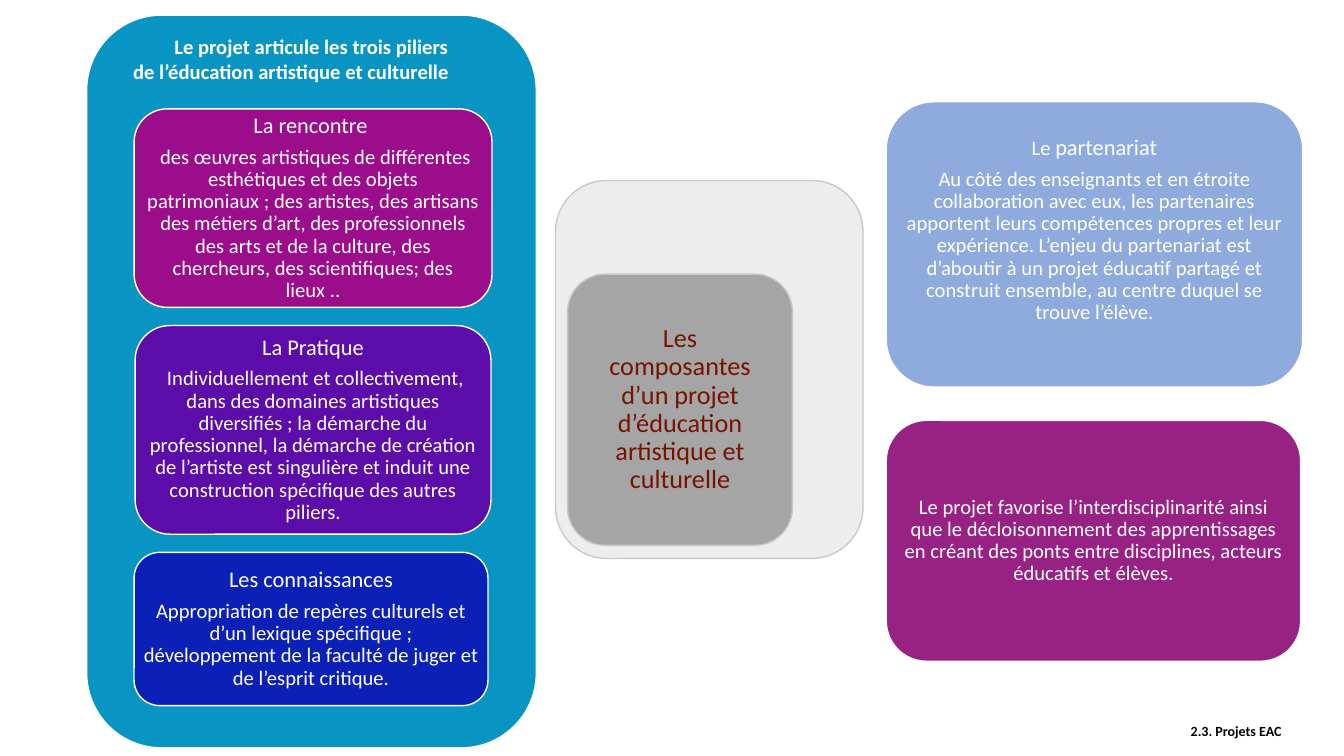
from dataclasses import dataclass

from pptx import Presentation
from pptx.dml.color import RGBColor
from pptx.enum import shapes, text
from pptx.util import Inches, Pt

FONT = "Calibri"
WHITE, GREY_LINE = "FFFFFF", "C9C9C9"
HEAD, BODY = 16, 14.7
CENTER, LEFT = text.PP_ALIGN.CENTER, text.PP_ALIGN.LEFT


@dataclass(frozen=True)
class Run:
    text: str
    size: float = BODY


@dataclass(frozen=True)
class Card:
    """A rounded box; box is left, top, width, height and insets follow left, top, right, bottom."""
    box: tuple[float, float, float, float]
    fill: str
    line: str = WHITE
    paragraphs: tuple[tuple[Run, ...], ...] = ()
    insets: tuple[float, float, float, float] = (0, 0, 0, 0)
    color: str = WHITE


PILLAR_INSETS = (0.01, 0.18, 0.01, 0.18)

CARDS = (
    Card((5.51, 1.79, 3.05, 3.75), "EDEDED", GREY_LINE),
    Card((0.86, 0.15, 4.46, 7.27), "0995C4"),
    Card((8.79, 1.01, 4.13, 2.83), "8FAADC", paragraphs=(
        (Run("Le "), Run("partenariat", HEAD)),
        (Run("Au côté des enseignants et en étroite collaboration avec eux, les partenaires "
             "apportent leurs compétences propres et leur expérience. L’enjeu du partenariat "
             "est d’aboutir à un projet éducatif partagé et construit ensemble, au centre "
             "duquel se trouve l’élève."),),
    ), insets=(0.05, 0.05, 0.05, 0.33)),
    Card((5.63, 2.72, 2.23, 2.69), "A5A5A5", GREY_LINE, (
        (Run("Les composantes d’un projet d’éducation artistique et culturelle", 18.7),),
    ), (0.14,) * 4, "761400"),
    Card((8.79, 4.17, 4.11, 2.39), "982283", paragraphs=(
        (Run("Le projet favorise l’interdisciplinarité ainsi que le décloisonnement des "
             "apprentissages en créant des ponts entre disciplines, acteurs éducatifs et "
             "élèves."),),
    ), insets=(0.06,) * 4),
    Card((1.33, 1.08, 3.55, 1.97), "9B0D8A", paragraphs=(
        (Run("La rencontre ", HEAD),),
        (Run(" des œuvres artistiques de différentes esthétiques et des objets patrimoniaux ; "
             "des artistes, des artisans des métiers d’art, des professionnels des arts et de "
             "la culture, des chercheurs, des scientifiques; des lieux .."),),
    ), insets=PILLAR_INSETS),
    Card((1.34, 3.23, 3.53, 2.07), "5B0CA9", paragraphs=(
        (Run("La Pratique", HEAD),),
        (Run(" Individuellement et collectivement, dans des domaines artistiques diversifiés ; "
             "la démarche du professionnel, la démarche de création de l’artiste est singulière "
             "et induit une construction spécifique des autres piliers."),),
    ), insets=PILLAR_INSETS),
    Card((1.33, 5.48, 3.51, 1.52), "0B20B6", paragraphs=(
        (Run("Les connaissances", HEAD),),
        (Run("Appropriation de repères culturels et d’un lexique spécifique ; développement "
             "de la faculté de juger et de l’esprit critique."),),
    ), insets=(0.01, 0.15, 0.01, 0.15)),
)


def rgb(color: str) -> RGBColor:
    return RGBColor.from_string(color)


def set_frame(tf, *, insets, anchor=text.MSO_ANCHOR.MIDDLE, wrap=True) -> None:
    tf.word_wrap = wrap
    tf.auto_size = text.MSO_AUTO_SIZE.NONE
    tf.vertical_anchor = anchor
    tf.margin_left, tf.margin_top, tf.margin_right, tf.margin_bottom = map(Inches, insets)


def add_text(tf, runs, *, color=WHITE, bold=False, align=CENTER, spacing=1.0, after=0) -> None:
    """Fill the first paragraph while it is empty, then append new ones."""
    p = tf.paragraphs[-1]
    if p.runs:
        p = tf.add_paragraph()
    p.alignment = align
    p.line_spacing = spacing
    p.space_before, p.space_after = Pt(0), Pt(after)
    for run in runs:
        r = p.add_run()
        r.text = run.text
        r.font.name, r.font.size, r.font.bold = FONT, Pt(run.size), bold
        r.font.color.rgb = rgb(color)


def add_card(s, card: Card) -> None:
    sp = s.shapes.add_shape(shapes.MSO_SHAPE.ROUNDED_RECTANGLE, *map(Inches, card.box))
    sp.shadow.inherit = False
    sp.fill.solid()
    sp.fill.fore_color.rgb = rgb(card.fill)
    sp.line.color.rgb = rgb(card.line)
    sp.line.width = Pt(1)
    set_frame(sp.text_frame, insets=card.insets)
    for runs in card.paragraphs:
        add_text(sp.text_frame, runs, color=card.color, spacing=0.9, after=0.35 * runs[-1].size)


def add_heading(s) -> None:
    """Place the title placeholder above the blue panel."""
    title = s.shapes.title
    title.left, title.top, title.width, title.height = map(Inches, (1.22, 0.29, 3.78, 0.59))
    title.element.getparent().append(title.element)
    tf = title.text_frame
    set_frame(tf, insets=(0.1, 0.05, 0.1, 0.05), anchor=text.MSO_ANCHOR.TOP, wrap=False)
    add_text(tf, [Run("Le projet articule les trois piliers ")], bold=True)
    add_text(tf, [Run("de l’éducation artistique et culturelle")], bold=True, align=LEFT)


def add_section_label(s) -> None:
    sp = s.shapes.add_textbox(*map(Inches, (11.81, 7, 1.4, 0.5)))
    set_frame(sp.text_frame, insets=(0, 0, 0, 0))
    add_text(sp.text_frame, [Run("2.3. Projets EAC", 10)], color="000000", bold=True, align=LEFT)


def main() -> None:
    prs = Presentation()
    prs.slide_width, prs.slide_height = Inches(13.33), Inches(7.5)
    s = prs.slides.add_slide(prs.slide_layouts.get_by_name("Title Only"))
    for card in CARDS:
        add_card(s, card)
    add_heading(s)
    add_section_label(s)
    prs.save("out.pptx")


if __name__ == "__main__":
    main()
